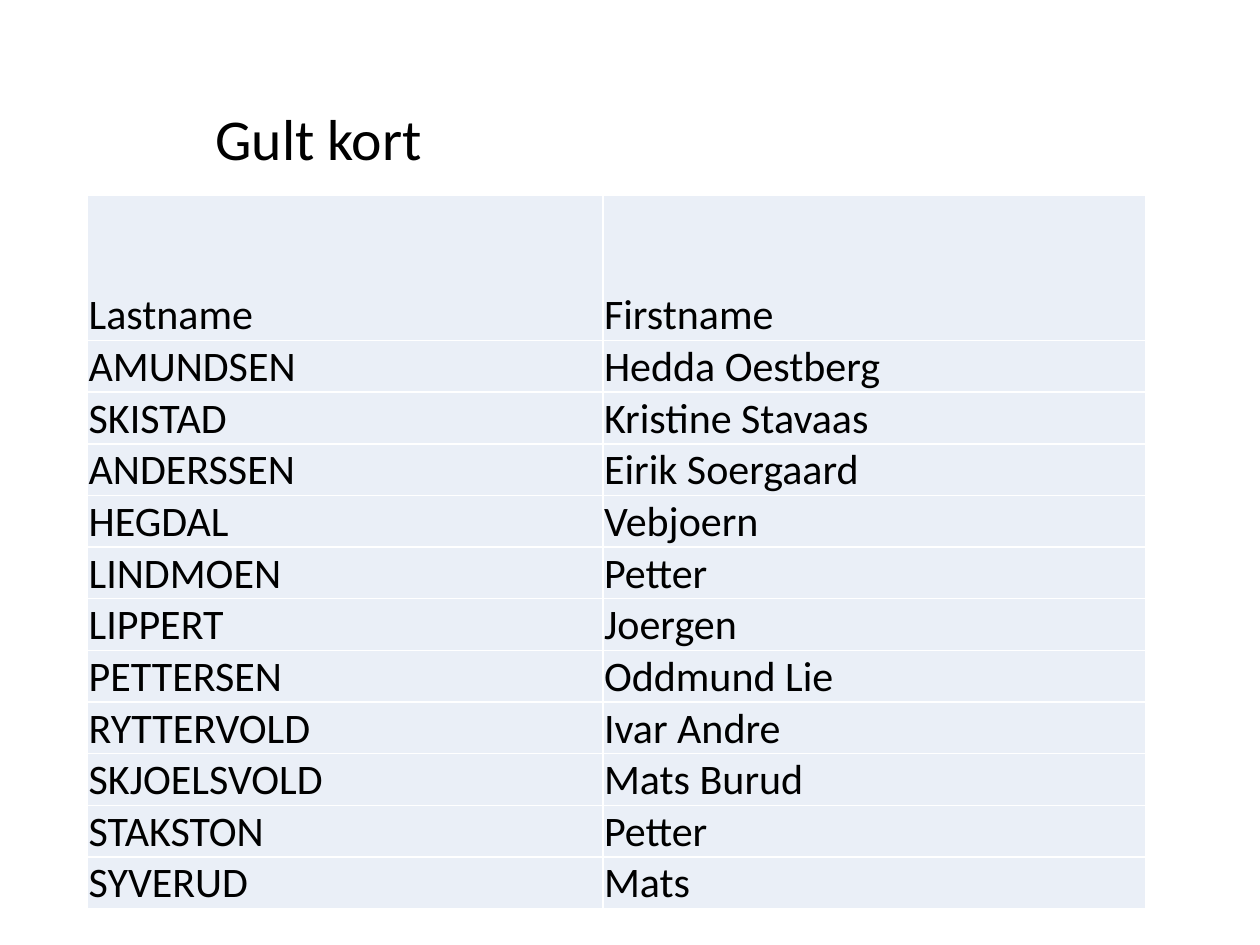
from dataclasses import dataclass

from lxml.etree import SubElement
from pptx import Presentation
from pptx.dml.color import RGBColor
from pptx.enum.text import MSO_ANCHOR
from pptx.oxml.ns import qn
from pptx.util import Pt


@dataclass(frozen=True)
class Theme:
    font: str = "Calibri"
    text: str = "000000"
    cell: str = "EAEFF7"
    border: str = "FFFFFF"
    title_size: int = 33
    table_size: int = 24


theme = Theme()


def write_text(text_frame, text, *, size, line_spacing=None):
    paragraph = text_frame.paragraphs[0]
    paragraph.line_spacing = line_spacing
    run = paragraph.add_run()
    run.text = text
    run.font.name = theme.font
    run.font.size = Pt(size)
    run.font.color.rgb = RGBColor.from_string(theme.text)


def add_borders(cell, color, width):
    properties = cell._tc.get_or_add_tcPr()
    for position, side in enumerate(("lnL", "lnR", "lnT", "lnB")):
        line = SubElement(properties, qn(f"a:{side}"), w=str(Pt(width)))
        fill = SubElement(line, qn("a:solidFill"))
        SubElement(fill, qn("a:srgbClr"), val=color)
        # Border lines must come before the cell fill
        properties.insert(position, line)


presentation = Presentation()
presentation.slide_width = Pt(720)
presentation.slide_height = Pt(540)
slide = presentation.slides.add_slide(presentation.slide_layouts[6])

# Title
title = slide.shapes.add_textbox(Pt(116), Pt(28.8), Pt(554.4), Pt(104.4))
title.text_frame.word_wrap = True
title.text_frame.vertical_anchor = MSO_ANCHOR.MIDDLE
write_text(title.text_frame, "Gult kort", size=theme.title_size, line_spacing=0.9)

# Table of names
names = [
    ("Lastname", "Firstname"),
    ("AMUNDSEN", "Hedda Oestberg"),
    ("SKISTAD", "Kristine Stavaas"),
    ("ANDERSSEN", "Eirik Soergaard"),
    ("HEGDAL", "Vebjoern"),
    ("LINDMOEN", "Petter"),
    ("LIPPERT", "Joergen"),
    ("PETTERSEN", "Oddmund Lie"),
    ("RYTTERVOLD", "Ivar Andre"),
    ("SKJOELSVOLD", "Mats Burud"),
    ("STAKSTON", "Petter"),
    ("SYVERUD", "Mats"),
]
column_widths = (294.5, 310.3)
header_height, row_height = 82.8, 27.4
table_height = header_height + row_height * (len(names) - 1)

table = slide.shapes.add_table(
    len(names), len(column_widths),
    Pt(50), Pt(111.8), Pt(sum(column_widths)), Pt(table_height),
).table
table.first_row = False
table.horz_banding = False
for column, width in zip(table.columns, column_widths):
    column.width = Pt(width)

for row_index, (row, texts) in enumerate(zip(table.rows, names)):
    row.height = Pt(row_height if row_index else header_height)
    for cell, text in zip(row.cells, texts):
        cell.margin_left = cell.margin_right = cell.margin_top = Pt(0.7)
        cell.margin_bottom = Pt(0)
        cell.vertical_anchor = MSO_ANCHOR.BOTTOM
        cell.fill.solid()
        cell.fill.fore_color.rgb = RGBColor.from_string(theme.cell)
        add_borders(cell, theme.border, 1)
        write_text(cell.text_frame, text, size=theme.table_size)

presentation.save("out.pptx")
